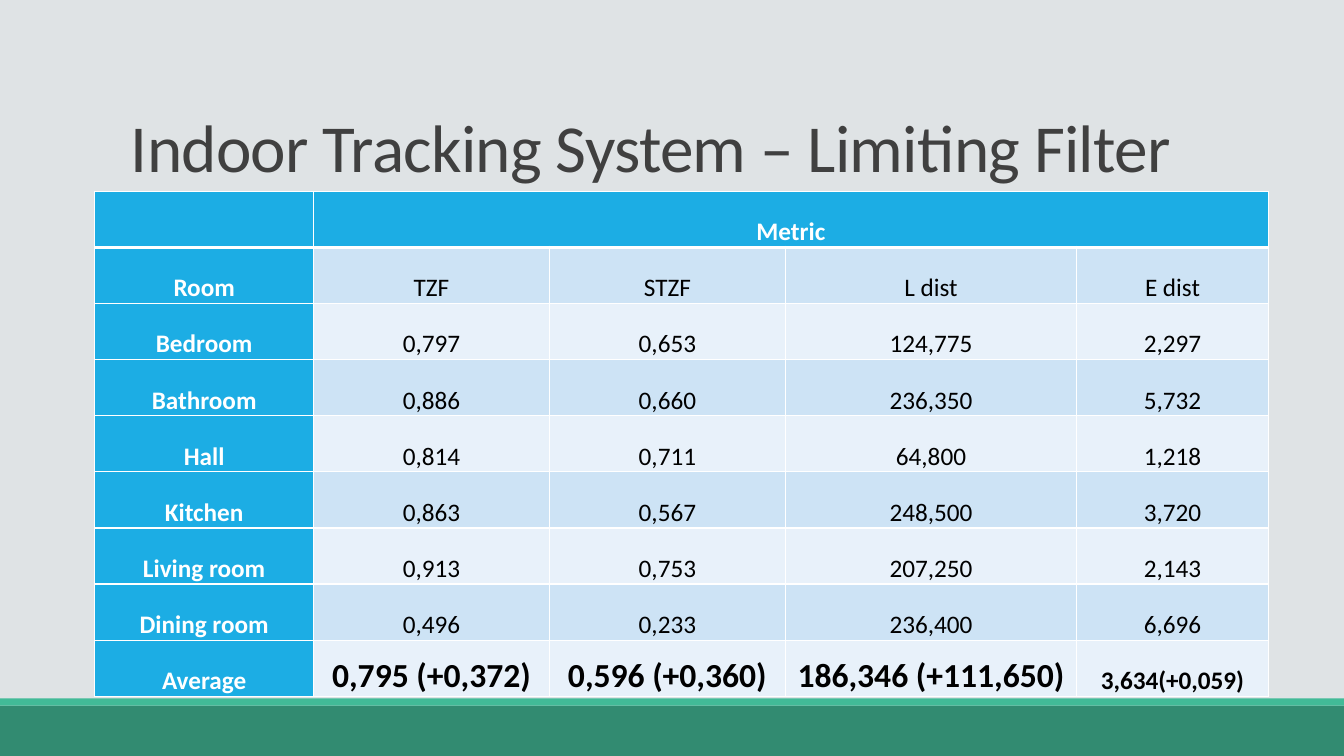
import dataclasses

import pptx
import pptx.dml.color
import pptx.enum.shapes
import pptx.enum.text
import pptx.oxml
import pptx.oxml.ns
import pptx.util
from pptx.util import Inches


@dataclasses.dataclass(frozen=True)
class Theme:
    font: str = "Calibri"
    background: str = "DFE3E5"
    footer: str = "328B71"
    footer_edge: str = "42BA97"
    title: str = "404040"
    header: str = "1CADE4"
    header_text: str = "FFFFFF"
    body_text: str = "000000"
    bands: tuple = ("CDE3F5", "E8F1FA")
    border: str = "FFFFFF"
    title_size: int = 48
    table_size: int = 18
    average_size: int = 24
    border_width: int = 1
    header_rule_width: int = 3


THEME = Theme()

METRICS = [
    ["", "Metric", "", "", ""],
    ["Room", "TZF", "STZF", "L dist", "E dist"],
    ["Bedroom", "0,797", "0,653", "124,775", "2,297"],
    ["Bathroom", "0,886", "0,660", "236,350", "5,732"],
    ["Hall", "0,814", "0,711", "64,800", "1,218"],
    ["Kitchen", "0,863", "0,567", "248,500", "3,720"],
    ["Living room", "0,913", "0,753", "207,250", "2,143"],
    ["Dining room", "0,496", "0,233", "236,400", "6,696"],
    ["Average", "0,795 (+0,372)", "0,596 (+0,360)", "186,346 (+111,650)", "3,634(+0,059)"],
]
COLUMN_SHARES = [2.17, 2.34, 2.34, 2.89, 1.9]


def rgb(value):
    return pptx.dml.color.RGBColor.from_string(value)


def style_font(font, size, color, bold=False):
    font.name = THEME.font
    font.size = pptx.util.Pt(size)
    font.bold = bold
    font.color.rgb = rgb(color)


def add_band(slide, left, top, width, height, color):
    band = slide.shapes.add_shape(
        pptx.enum.shapes.MSO_SHAPE.RECTANGLE,
        Inches(left), Inches(top), Inches(width), Inches(height))
    band.shadow.inherit = False
    band.fill.solid()
    band.fill.fore_color.rgb = rgb(color)
    band.line.fill.background()


def add_footer(slide, left, top, width, height):
    edge = 0.07
    add_band(slide, left, top + edge, width, height - edge, THEME.footer)
    add_band(slide, left, top, width, edge, THEME.footer_edge)


def add_title(slide, left, top, width, height):
    title = slide.shapes.add_textbox(
        Inches(left), Inches(top), Inches(width), Inches(height)).text_frame
    title.word_wrap = True
    title.vertical_anchor = pptx.enum.text.MSO_ANCHOR.BOTTOM
    title.text = "Indoor Tracking System – Limiting Filter"
    heading = title.paragraphs[0]
    heading.line_spacing = 0.85
    style_font(heading.runs[0].font, THEME.title_size, THEME.title)
    heading.runs[0].font._element.set("spc", "-50")


def add_borders(cell, row):
    widths = dict.fromkeys("LRTB", THEME.border_width)
    if row == 0:
        widths["B"] = THEME.header_rule_width
    elif row == 1:
        widths["T"] = THEME.header_rule_width
    properties = cell._tc.get_or_add_tcPr()
    for side, width in widths.items():
        properties.append(pptx.oxml.parse_xml(
            f'<a:ln{side} {pptx.oxml.ns.nsdecls("a")} w="{pptx.util.Pt(width)}">'
            f'<a:solidFill><a:srgbClr val="{THEME.border}"/></a:solidFill></a:ln{side}>'))


def style_cell(cell, row, column, text):
    is_header = row == 0 or column == 0
    is_average = row == len(METRICS) - 1 and column > 0
    is_large = is_average and column < len(COLUMN_SHARES) - 1
    add_borders(cell, row)
    cell.fill.solid()
    cell.fill.fore_color.rgb = rgb(THEME.header if is_header else THEME.bands[(row - 1) % 2])
    cell.margin_left = cell.margin_right = Inches(0.07)
    cell.margin_top = cell.margin_bottom = 0
    cell.vertical_anchor = pptx.enum.text.MSO_ANCHOR.BOTTOM
    if text:
        cell.text_frame.text = text
        entry = cell.text_frame.paragraphs[0]
        entry.alignment = pptx.enum.text.PP_ALIGN.CENTER
        style_font(
            entry.runs[0].font,
            THEME.average_size if is_large else THEME.table_size,
            THEME.header_text if is_header else THEME.body_text,
            is_header or is_average)


def add_metrics(slide, left, top, width, height):
    metrics = slide.shapes.add_table(
        len(METRICS), len(COLUMN_SHARES),
        Inches(left), Inches(top), Inches(width), Inches(height)).table
    for column, share in zip(metrics.columns, COLUMN_SHARES):
        column.width = Inches(width * share / sum(COLUMN_SHARES))
    for row in metrics.rows:
        row.height = Inches(height / len(METRICS))
    for row, entries in enumerate(METRICS):
        for column, text in enumerate(entries):
            style_cell(metrics.cell(row, column), row, column, text)
    metrics.cell(0, 1).merge(metrics.cell(0, len(COLUMN_SHARES) - 1))


def main():
    deck = pptx.Presentation()
    deck.slide_width = Inches(13.33)
    deck.slide_height = Inches(7.5)
    slide = deck.slides.add_slide(deck.slide_layouts[6])
    slide.background.fill.solid()
    slide.background.fill.fore_color.rgb = rgb(THEME.background)
    add_footer(slide, 0, 6.93, 13.33, 0.57)
    add_title(slide, 1.2, 0.31, 11, 1.59)
    add_metrics(slide, 0.94, 1.9, 11.64, 5.01)
    deck.save("out.pptx")


if __name__ == "__main__":
    main()
